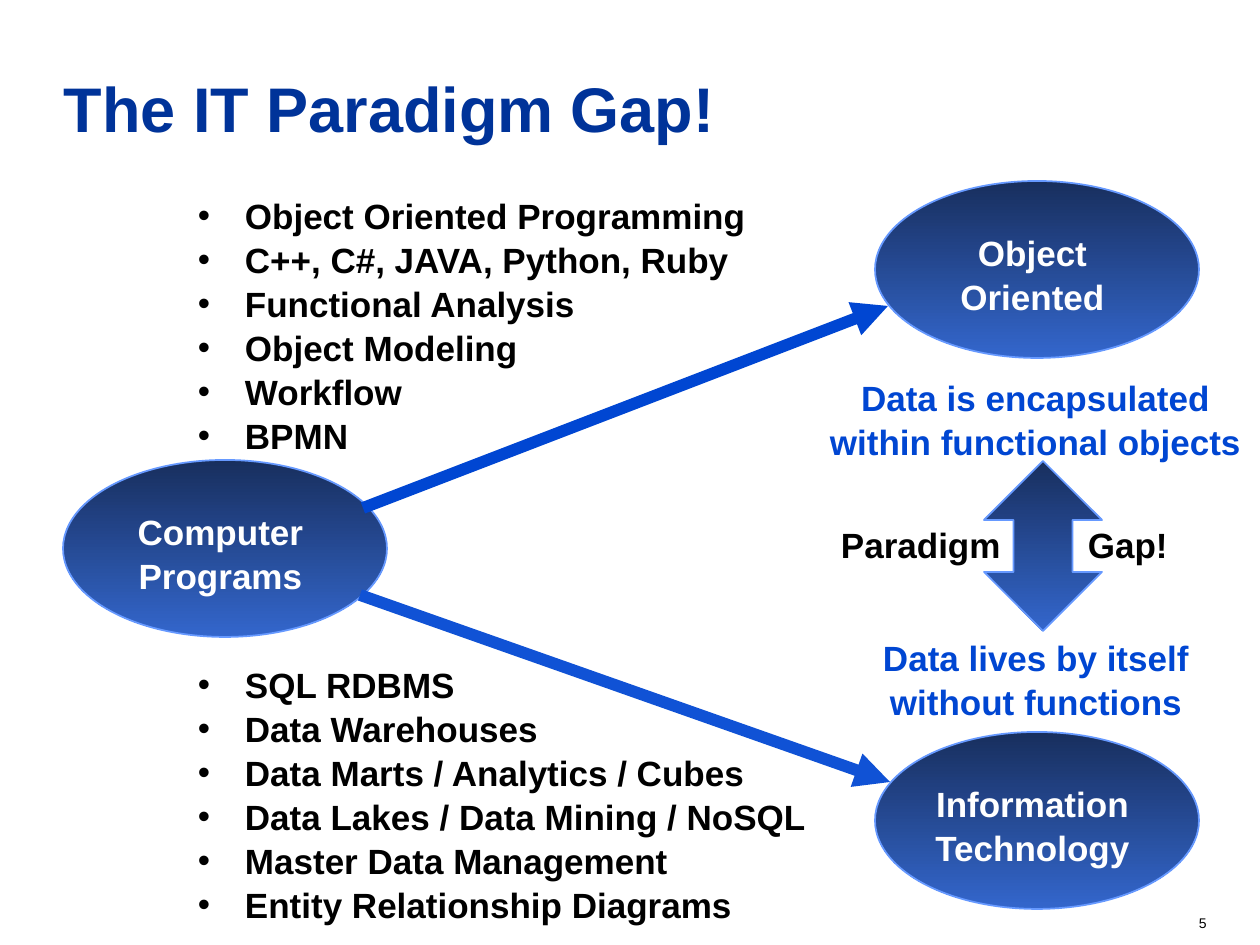
from lxml.etree import SubElement
from pptx import Presentation
from pptx.dml.color import RGBColor
from pptx.enum.shapes import MSO_CONNECTOR as Connector, MSO_SHAPE as Shape
from pptx.enum.text import MSO_ANCHOR as Anchor, MSO_AUTO_SIZE as AutoSize, PP_ALIGN as Align
from pptx.oxml.ns import qn
from pptx.util import Pt

PX = 914400 / 126
NAVY, BLUE, WHITE, BLACK = "003399", "0046D2", "FFFFFF", "000000"
color = RGBColor.from_string


def emu(*lengths):
    return [round(length * PX) for length in lengths]


def write(shape, lines, size=20, ink=BLACK, bold=True, align=Align.LEFT, margins=(13, 6, 13, 6), spacing=1.05):
    frame = shape.text_frame
    left, top, right, bottom = emu(*margins)
    frame_format = {
        "word_wrap": True, "auto_size": AutoSize.NONE, "vertical_anchor": Anchor.TOP,
        "margin_left": left, "margin_top": top, "margin_right": right, "margin_bottom": bottom,
    }
    for name, value in frame_format.items():
        setattr(frame, name, value)
    frame.text = "\n".join(lines)
    for paragraph in frame.paragraphs:
        paragraph.alignment = align
        paragraph.line_spacing = spacing
        for run in paragraph.runs:
            for name, value in {"name": "Arial", "size": Pt(size), "bold": bold}.items():
                setattr(run.font, name, value)
            run.font.color.rgb = color(ink)
    return frame.paragraphs


presentation = Presentation()
presentation.slide_width, presentation.slide_height = emu(1260, 945)
slide = presentation.slides.add_slide(presentation.slide_layouts[5])
shapes = slide.shapes

title = shapes.title
title.left, title.top, title.width, title.height = emu(64, 63, 1008, 73)
write(title, ["The IT Paradigm Gap!"], size=36, ink=NAVY, margins=(0, 7, 0, 0), spacing=1.0)

gradient_shapes = [
    (Shape.OVAL, 63, 460, 324, 177, "Computer Programs"),
    (Shape.OVAL, 875, 732, 324, 177, "Information Technology"),
    (Shape.OVAL, 875, 181, 324, 177, "Object Oriented"),
    (Shape.UP_DOWN_ARROW, 984, 461, 118, 170, None),
]
for kind, left, top, width, height, label in gradient_shapes:
    shape = shapes.add_shape(kind, *emu(left, top, width, height))
    shape.shadow.inherit = False
    shape.fill.gradient()
    shape.fill.gradient_angle = 270
    for stop, shade in zip(shape.fill.gradient_stops, ("182F5E", "3366CC")):
        stop.color.rgb = color(shade)
    shape.line.color.rgb = color("6699FF")
    shape.line.width = Pt(1)
    if label:
        box = shapes.add_textbox(*emu(left + 31, top + 42, 253, 97))
        write(box, [label], ink=WHITE, align=Align.CENTER)

arrows = [
    (363, 508, 888, 306, BLUE),
    (360, 595, 890, 782, "1052D5"),
]
for *ends, ink in arrows:
    arrow = shapes.add_connector(Connector.STRAIGHT, *emu(*ends))
    arrow.line.color.rgb = color(ink)
    arrow.line.width = Pt(6.75)
    SubElement(arrow.line._get_or_add_ln(), qn("a:tailEnd"), type="triangle")
    SubElement(arrow._element.spPr, qn("a:effectLst"))

bullet_lists = [
    (186, 602, [
        "Object Oriented Programming", "C++, C#, JAVA, Python, Ruby", "Functional Analysis",
        "Object Modeling", "Workflow", "BPMN",
    ]),
    (655, 651, [
        "SQL RDBMS", "Data Warehouses", "Data Marts / Analytics / Cubes",
        "Data Lakes / Data Mining / NoSQL", "Master Data Management", "Entity Relationship Diagrams",
    ]),
]
indent, = emu(47)
for top, width, items in bullet_lists:
    box = shapes.add_textbox(*emu(185, top, width, 290))
    for paragraph in write(box, items):
        properties = paragraph._p.get_or_add_pPr()
        properties.set("marL", str(indent))
        properties.set("indent", str(-indent))
        SubElement(properties, qn("a:buFont"), typeface="Arial")
        SubElement(properties, qn("a:buChar"), char="•")

captions = [
    (811, 368, 449, "Data is encapsulated within functional objects"),
    (838, 628, 396, "Data lives by itself without functions"),
]
for left, top, width, caption in captions:
    box = shapes.add_textbox(*emu(left, top, width, 97))
    write(box, [caption], ink=BLUE, align=Align.CENTER)

gap_label = shapes.add_textbox(*emu(828, 515, 416, 55))
gap_paragraph = write(gap_label, ["Paradigm\tGap!"])[0]
tab_list = SubElement(gap_paragraph._p.get_or_add_pPr(), qn("a:tabLst"))
SubElement(tab_list, qn("a:tab"), pos=str(emu(247)[0]), algn="l")

page_number = shapes.add_textbox(*emu(1199, 914, 60, 31))
write(page_number, ["5"], size=8, bold=False, margins=(0, 0, 0, 0))

presentation.save("out.pptx")
